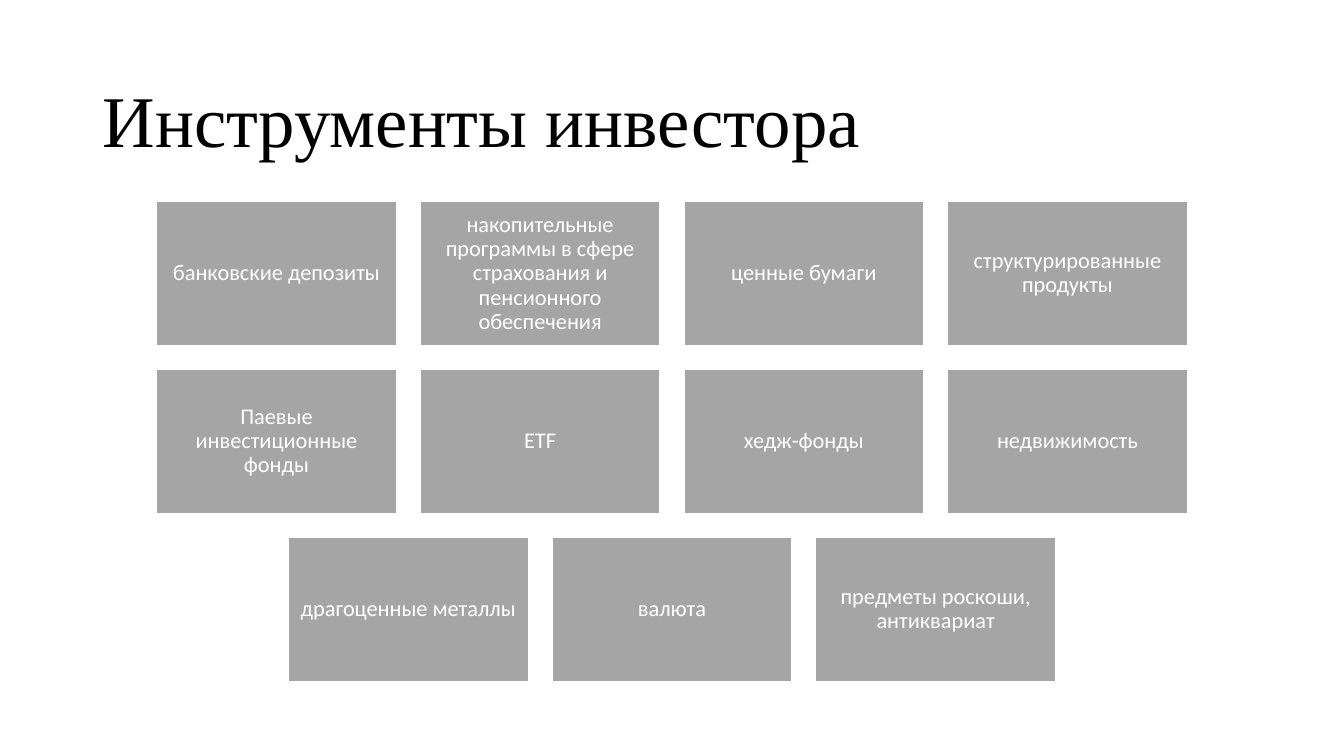
import pptx
import pptx.util
import pptx.dml.color
import pptx.enum.shapes
import pptx.enum.text

Inches = pptx.util.Inches
Pt = pptx.util.Pt
RGBColor = pptx.dml.color.RGBColor
PP_ALIGN = pptx.enum.text.PP_ALIGN

BLACK = RGBColor(0x00, 0x00, 0x00)
WHITE = RGBColor(0xFF, 0xFF, 0xFF)
GRAY = RGBColor(0xA5, 0xA5, 0xA5)

SLIDE_W, SLIDE_H = 13.33, 7.5
CARD_W, CARD_H = 2.38, 1.43
GAP = 0.235
CARDS_TOP = 2

INSTRUMENT_ROWS = [
    ["банковские депозиты",
     "накопительные программы в сфере страхования и пенсионного обеспечения",
     "ценные бумаги",
     "структурированные продукты"],
    ["Паевые инвестиционные фонды", "ETF", "хедж-фонды", "недвижимость"],
    ["драгоценные металлы", "валюта", "предметы роскоши, антиквариат"],
]


def set_text(sp, text, font, size, color, align, inset_x, inset_y):
    tf = sp.text_frame
    tf.word_wrap = True
    tf.vertical_anchor = pptx.enum.text.MSO_ANCHOR.MIDDLE
    tf.margin_left = tf.margin_right = Inches(inset_x)
    tf.margin_top = tf.margin_bottom = Inches(inset_y)
    tf.text = text
    p = tf.paragraphs[0]
    p.alignment = align
    p.line_spacing = 0.9
    r = p.runs[0]
    r.font.name = font
    r.font.size = Pt(size)
    r.font.color.rgb = color


def add_title(s, text):
    sp = s.shapes.add_textbox(Inches(0.92), Inches(0.61), Inches(11.5), Inches(1.24))
    set_text(sp, text, "Times New Roman", 52, BLACK, PP_ALIGN.LEFT, 0.1, 0.05)


def add_card(s, left, top, text):
    sp = s.shapes.add_shape(pptx.enum.shapes.MSO_SHAPE.RECTANGLE,
                            Inches(left), Inches(top), Inches(CARD_W), Inches(CARD_H))
    sp.shadow.inherit = False
    sp.fill.solid()
    sp.fill.fore_color.rgb = GRAY
    sp.line.color.rgb = WHITE
    sp.line.width = Pt(1)
    set_text(sp, text, "Calibri", 16, WHITE, PP_ALIGN.CENTER, 0.07, 0.07)


def add_card_row(s, top, texts):
    """Centre one row of cards across the slide."""
    row_w = len(texts) * (CARD_W + GAP) - GAP
    left = (SLIDE_W - row_w) / 2
    for i, text in enumerate(texts):
        add_card(s, left + i * (CARD_W + GAP), top, text)


def main():
    prs = pptx.Presentation()
    prs.slide_width = Inches(SLIDE_W)
    prs.slide_height = Inches(SLIDE_H)
    s = prs.slides.add_slide(prs.slide_layouts[6])

    # Title
    add_title(s, "Инструменты инвестора")

    # Grid of investment instruments
    for i, texts in enumerate(INSTRUMENT_ROWS):
        add_card_row(s, CARDS_TOP + i * (CARD_H + GAP), texts)

    prs.save("out.pptx")


if __name__ == "__main__":
    main()
